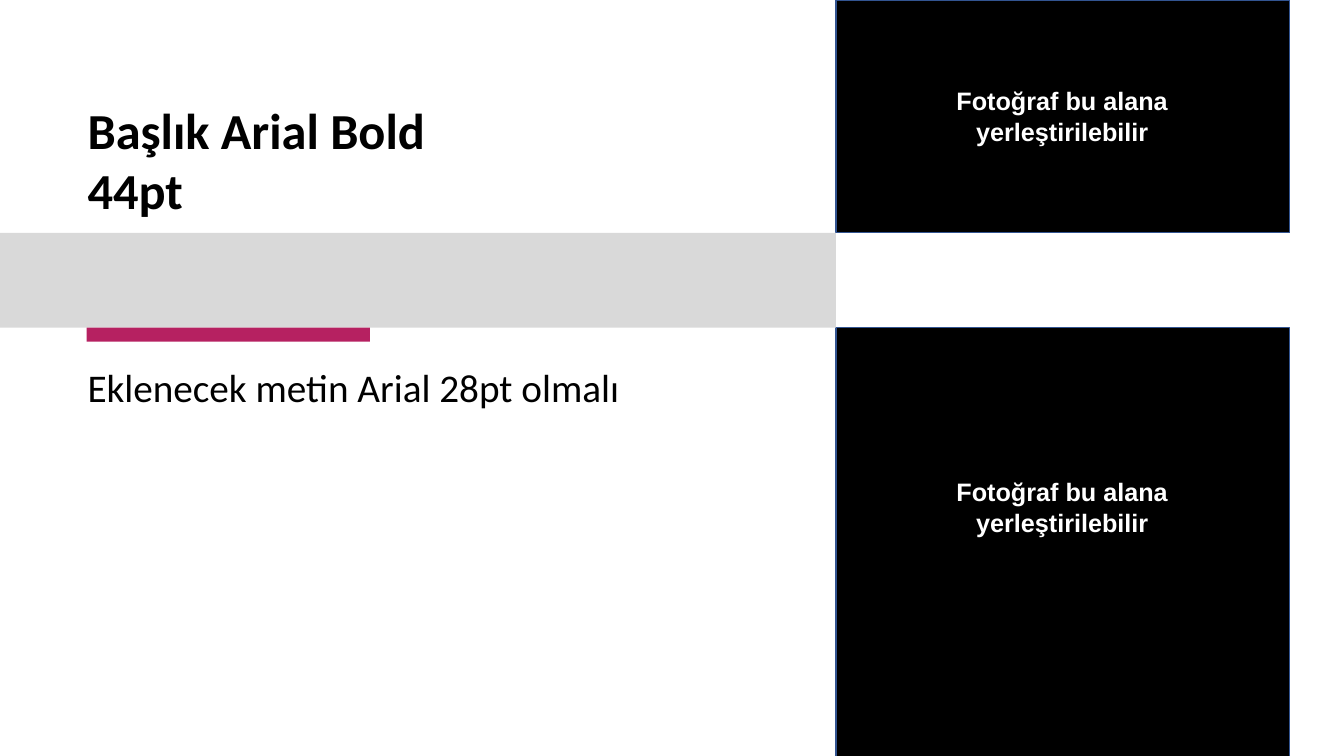
from dataclasses import dataclass

from pptx import Presentation
from pptx.dml.color import RGBColor as Rgb
from pptx.enum.shapes import MSO_SHAPE as Shape
from pptx.enum.text import PP_ALIGN as Align
from pptx.util import Pt

PX = 9144  # EMU per px, 100 px to the inch


@dataclass(frozen=True)
class Theme:
    black: Rgb = Rgb.from_string("000000")
    white: Rgb = Rgb.from_string("FFFFFF")
    band: Rgb = Rgb.from_string("D9D9D9")
    accent: Rgb = Rgb.from_string("B62161")
    photo_line: Rgb = Rgb.from_string("325491")
    text_font: str = "Calibri"
    caption_font: str = "Arial"
    title_size: int = 36
    body_size: int = 28
    caption_size: int = 18


THEME = Theme()


@dataclass(frozen=True)
class Box:
    left: int
    top: int
    width: int
    height: int

    def emu(self):
        return [length * PX for length in (self.left, self.top, self.width, self.height)]


def add_rectangle(slide, box, fill, line=None):
    shape = slide.shapes.add_shape(Shape.RECTANGLE, *box.emu())
    shape.shadow.inherit = False
    shape.fill.solid()
    shape.fill.fore_color.rgb = fill
    if line is None:
        shape.line.fill.background()
    else:
        shape.line.color.rgb = line
        shape.line.width = Pt(1)


def add_text(slide, box, text, size, font=THEME.text_font, color=THEME.black, bold=False):
    """Add a wrapped text box and return its only paragraph."""
    frame = slide.shapes.add_textbox(*box.emu()).text_frame
    frame.word_wrap = True
    frame.text = text
    para = frame.paragraphs[0]
    span = para.runs[0]
    span.font.name = font
    span.font.size = Pt(size)
    span.font.color.rgb = color
    span.font.bold = bold
    return para


def add_photo_area(slide, box, caption_offset):
    """Draw a photo area with its caption at the given distance from the top."""
    add_rectangle(slide, box, THEME.black, THEME.photo_line)
    width = 269
    caption_box = Box(box.left + (box.width - width) // 2, box.top + caption_offset, width, 71)
    para = add_text(slide, caption_box, "Fotoğraf bu alana yerleştirilebilir",
                    THEME.caption_size, THEME.caption_font, THEME.white, bold=True)
    para.alignment = Align.CENTER


def add_content(slide, box):
    """Draw the title, grey band, accent bar and body text."""
    margin = box.left + 77
    band = Box(box.left, box.top + 231, box.width, 94)
    band_bottom = band.top + band.height
    add_rectangle(slide, band, THEME.band)
    add_rectangle(slide, Box(margin + 9, band_bottom, 281, 14), THEME.accent)
    add_text(slide, Box(margin, box.top + 93, 386, 131), "Başlık Arial Bold 44pt",
             THEME.title_size, bold=True)
    body = add_text(slide, Box(margin, band_bottom + 36, 663, 333),
                    "Eklenecek metin Arial 28pt olmalı", THEME.body_size)
    body.line_spacing = 0.9


def main():
    deck = Presentation()
    page = Box(0, 0, 1333, 750)
    deck.slide_width, deck.slide_height = page.width * PX, page.height * PX
    slide = deck.slides.add_slide(deck.slide_layouts[6])
    split = 829
    add_photo_area(slide, Box(split, 0, 450, 231), caption_offset=80)
    add_photo_area(slide, Box(split, 325, 450, 428), caption_offset=143)
    add_content(slide, Box(0, 0, split, page.height))
    deck.save("out.pptx")


if __name__ == "__main__":
    main()
